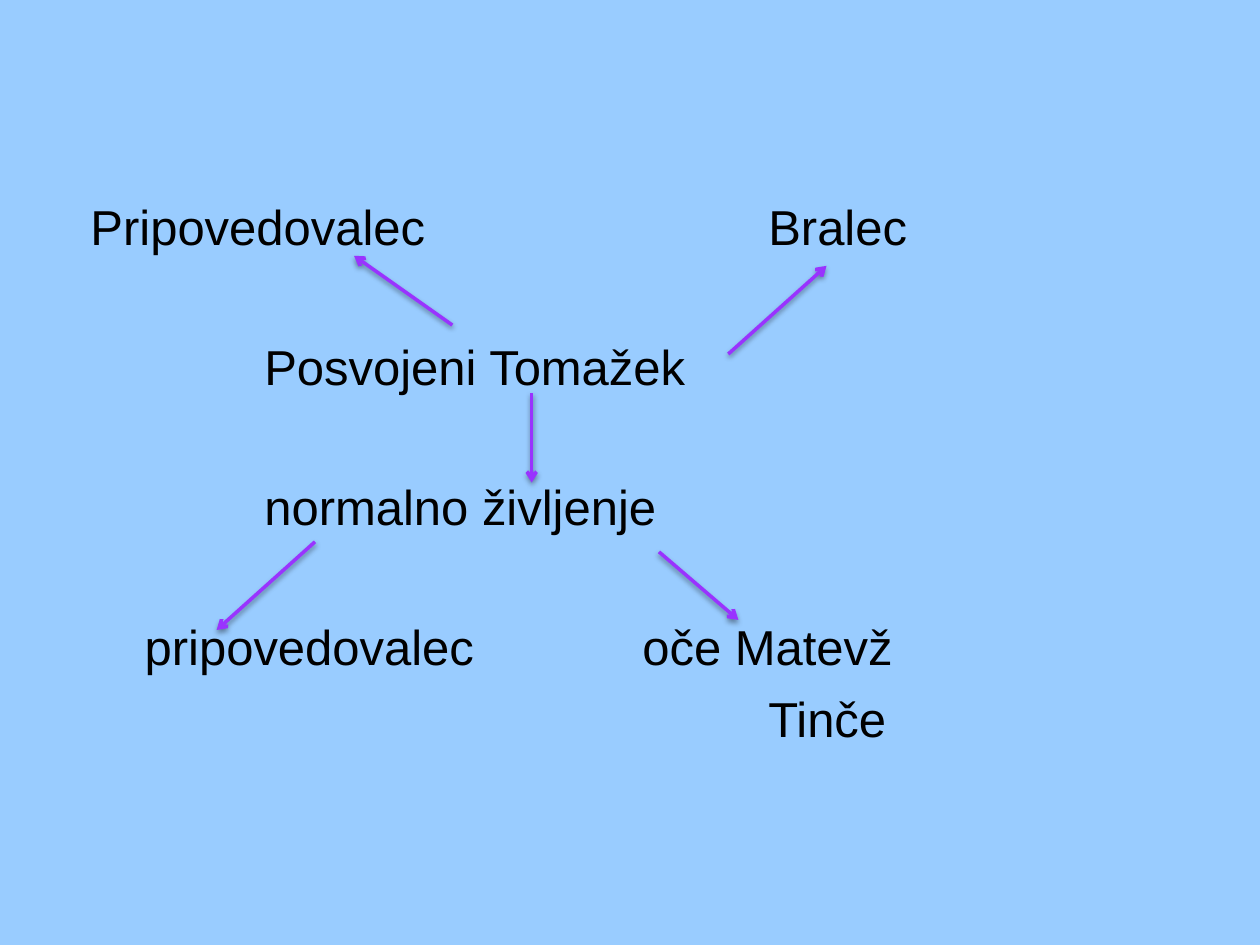
from dataclasses import dataclass

from lxml import etree
from pptx import Presentation
from pptx import util as u
from pptx.dml.color import RGBColor
from pptx.enum import shapes, text
from pptx.oxml import parse_xml
from pptx.oxml.ns import nsdecls, qn


@dataclass(frozen=True)
class Theme:
    font: str = "Arial"
    size: float = 28
    ink: str = "000000"
    background: str = "99CCFF"
    arrow: str = "9933FF"


theme = Theme()
Inches, Pt = u.Inches, u.Pt


def write(p, words, tabs=(), before=0, size=theme.size, color=theme.ink):
    """Fill a paragraph; tabs are stops in inches from the text's left edge."""
    pPr = p._p.get_or_add_pPr()
    if tabs:
        stops = etree.SubElement(pPr, qn("a:tabLst"))
        for stop in tabs:
            etree.SubElement(stops, qn("a:tab"), pos=str(Inches(stop)), algn="l")
    p.space_before = Pt(before)
    r = p.add_run()
    r.text = words
    r.font.name = theme.font
    r.font.size = Pt(size)
    r.font.color.rgb = RGBColor.from_string(color)


def add_arrow(s, start, end):
    c = s.shapes.add_connector(shapes.MSO_CONNECTOR.STRAIGHT,
                               *map(Inches, start + end))
    c.line.color.rgb = RGBColor.from_string(theme.arrow)
    c.line.width = Pt(2)
    etree.SubElement(c.line._get_or_add_ln(), qn("a:tailEnd"), type="arrow")
    c._element.spPr.append(parse_xml(
        f'<a:effectLst {nsdecls("a")}>'
        f'<a:outerShdw blurRad="{Pt(3.1)}" dist="{Pt(1.6)}" dir="5400000" rotWithShape="0">'
        f'<a:srgbClr val="{theme.ink}"><a:alpha val="38000"/></a:srgbClr>'
        '</a:outerShdw></a:effectLst>'))


prs = Presentation()
prs.slide_width, prs.slide_height = Inches(10), Inches(7.5)
s = prs.slides.add_slide(prs.slide_layouts[6])
s.background.fill.solid()
s.background.fill.fore_color.rgb = RGBColor.from_string(theme.background)

# Relationship map: words, tab stops, space before
MIDDLE, RIGHT = 1.38, 5.38
NEXT_LINE, NEXT_LEVEL = 7.2, 46.4
lines = [
    ("Pripovedovalec\tBralec", [RIGHT], 0),
    ("\tPosvojeni Tomažek", [MIDDLE], NEXT_LEVEL),
    ("\tnormalno življenje", [MIDDLE], NEXT_LEVEL),
    ("\tpripovedovalec\toče Matevž", [0.43, RIGHT - 1], NEXT_LEVEL),
    ("\tTinče", [RIGHT], NEXT_LINE),
]
sp = s.shapes.add_textbox(Inches(0.62), Inches(1.51), Inches(9), Inches(5.29))
tf = sp.text_frame
tf.word_wrap = True
tf.vertical_anchor = text.MSO_ANCHOR.TOP
for i, (words, tabs, before) in enumerate(lines):
    p = tf.add_paragraph() if i else tf.paragraphs[0]
    write(p, words, tabs=tabs, before=before)

arrows = [
    ((3.59, 2.58), (2.81, 2.03)),
    ((5.78, 2.81), (6.56, 2.11)),
    ((4.22, 3.12), (4.22, 3.83)),
    ((2.5, 4.3), (1.72, 5)),
    ((5.23, 4.38), (5.86, 4.92)),
]
for start, end in arrows:
    add_arrow(s, start, end)

prs.save("out.pptx")
